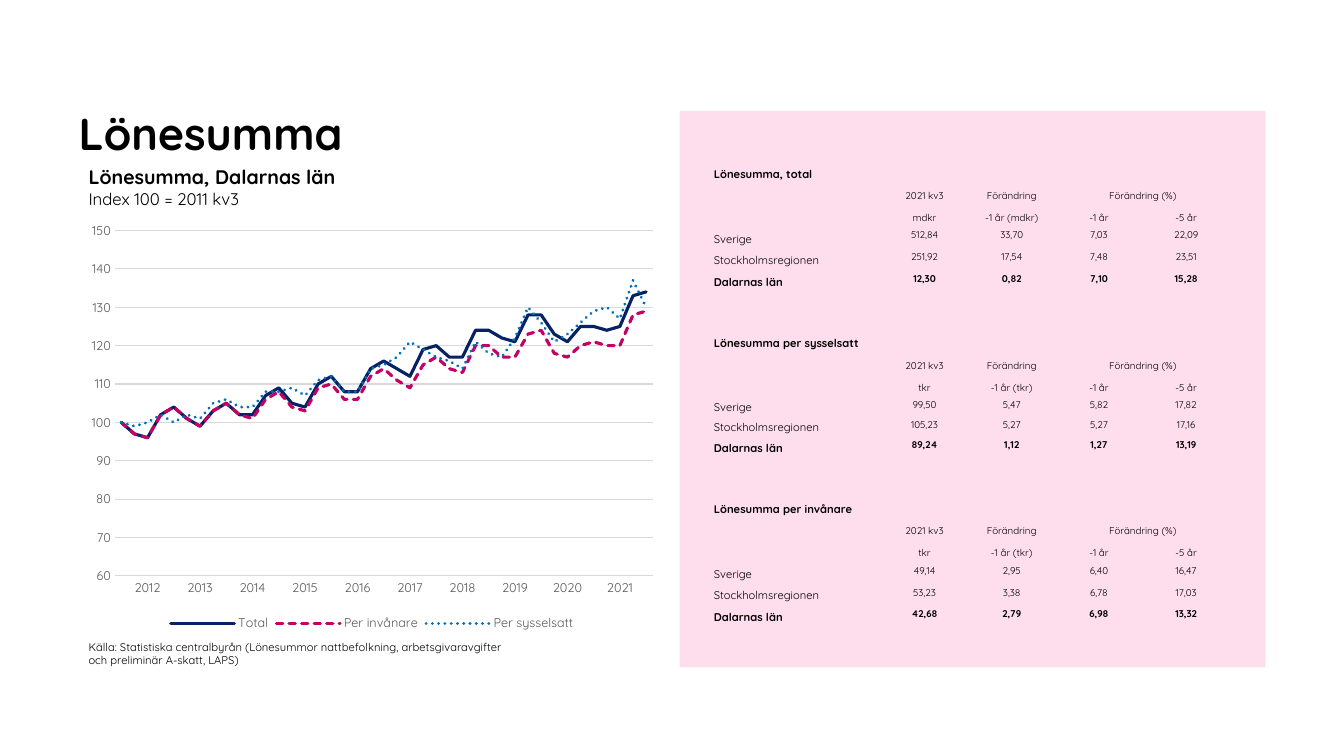
from lxml.etree import SubElement
from pptx import Presentation
from pptx.chart.data import CategoryChartData
from pptx.dml.color import RGBColor
from pptx.enum.chart import XL_CHART_TYPE, XL_LEGEND_POSITION, XL_TICK_MARK
from pptx.enum.dml import MSO_LINE
from pptx.enum.shapes import MSO_SHAPE
from pptx.enum.text import MSO_ANCHOR, MSO_AUTO_SIZE, PP_ALIGN
from pptx.oxml import parse_xml
from pptx.oxml.ns import nsdecls, qn
from pptx.util import Inches, Pt

FONT = "Quicksand"
BLACK = RGBColor(0, 0, 0)
PINK = RGBColor(0xFE, 0xDE, 0xED)
GREY = RGBColor(0x59, 0x59, 0x59)
PALE = RGBColor(0xD9, 0xD9, 0xD9)
NAVY = RGBColor(0x05, 0x23, 0x64)
MAGENTA = RGBColor(0xC4, 0x00, 0x64)
BLUE = RGBColor(0x00, 0x6E, 0xBF)
NO_GRID = "{2D5ABB26-0587-4C30-8999-92F81FD0307C}"

# Quarterly index: name, colour, dash, values
SERIES = [
    ("Total", NAVY, MSO_LINE.SOLID, [
        100, 97, 96, 102, 104, 101, 99, 103, 105, 102, 102, 107, 109, 105,
        104, 110, 112, 108, 108, 114, 116, 114, 112, 119, 120, 117, 117, 124,
        124, 122, 121, 128, 128, 123, 121, 125, 125, 124, 125, 133, 134]),
    ("Per invånare", MAGENTA, MSO_LINE.SQUARE_DOT, [
        100, 97, 96, 102, 104, 101, 99, 103, 105, 102, 101, 106, 108, 104,
        103, 109, 110, 106, 106, 112, 114, 111, 109, 115, 117, 114, 113, 120,
        120, 117, 117, 123, 124, 118, 117, 120, 121, 120, 120, 128, 129]),
    ("Per sysselsatt", BLUE, MSO_LINE.ROUND_DOT, [
        100, 99, 100, 102, 100, 102, 101, 105, 106, 104, 104, 108, 108, 109,
        107, 111, 112, 108, 108, 114, 115, 117, 121, 119, 117, 116, 114, 121,
        118, 117, 122, 130, 126, 121, 123, 126, 129, 130, 127, 137, 130]),
]

# Table blocks: heading, unit, figures per region
REGIONS = ["Sverige", "Stockholmsregionen", "Dalarnas län"]
BLOCKS = [
    ("Lönesumma, total", "mdkr", [
        ["512,84", "33,70", "7,03", "22,09"],
        ["251,92", "17,54", "7,48", "23,51"],
        ["12,30", "0,82", "7,10", "15,28"]]),
    ("Lönesumma per sysselsatt", "tkr", [
        ["99,50", "5,47", "5,82", "17,82"],
        ["105,23", "5,27", "5,27", "17,16"],
        ["89,24", "1,12", "1,27", "13,19"]]),
    ("Lönesumma per invånare", "tkr", [
        ["49,14", "2,95", "6,40", "16,47"],
        ["53,23", "3,38", "6,78", "17,03"],
        ["42,68", "2,79", "6,98", "13,32"]]),
]
WIDTHS = [1.67, 0.86, 0.87, 0.86, 0.87]
HEIGHTS = [0.21, 0.2, 0.22, 0.22, 0.21, 0.22, 0.21,
           0.4, 0.21, 0.22, 0.2, 0.2, 0.21, 0.2,
           0.4, 0.21, 0.22, 0.22, 0.21, 0.22]


def style(font, size, color=BLACK, bold=False):
    font.name, font.size, font.bold = FONT, Pt(size), bold
    font.color.rgb = color


def add_run(para, text, size, bold=False):
    run = para.add_run()
    run.text = text
    style(run.font, size, bold=bold)


def add_title(slide, text):
    title = slide.shapes.title
    title.left, title.top = Inches(0.78), Inches(0.37)
    title.width, title.height = Inches(9.22), Inches(1.22)
    frame = title.text_frame
    frame.auto_size = MSO_AUTO_SIZE.NONE
    frame.vertical_anchor = MSO_ANCHOR.BOTTOM
    frame.margin_left = frame.margin_right = 0
    frame.margin_top = frame.margin_bottom = 0
    para = frame.paragraphs[0]
    para.alignment = PP_ALIGN.LEFT
    para.line_spacing = 0.9
    add_run(para, text, 32, True)


def add_text(slide, box, lines):
    frame = slide.shapes.add_textbox(*map(Inches, box)).text_frame
    frame.word_wrap = True
    para = frame.paragraphs[0]
    for i, line in enumerate(lines):
        if i:
            para.add_line_break()
        add_run(para, *line)


def add_panel(slide):
    panel = slide.shapes.add_shape(
        MSO_SHAPE.RECTANGLE, *map(Inches, (6.74, 1.1, 5.81, 5.52)))
    panel.shadow.inherit = False
    panel.fill.solid()
    panel.fill.fore_color.rgb = PINK
    panel.line.fill.background()


def fill_cell(cell, text, size, bold=False, align=PP_ALIGN.CENTER,
              anchor=MSO_ANCHOR.BOTTOM):
    cell.vertical_anchor = anchor
    para = cell.text_frame.paragraphs[0]
    para.alignment = align
    add_run(para, text, size, bold)


def add_table(slide):
    frame = slide.shapes.add_table(
        len(HEIGHTS), len(WIDTHS), *map(Inches, (7.07, 1.59, 5.14, 4.61)))
    table = frame.table
    table.first_row = table.horz_banding = False
    table._tbl.tblPr.find(qn("a:tableStyleId")).text = NO_GRID
    for col, width in zip(table.columns, WIDTHS):
        col.width = Inches(width)
    for row, height in zip(table.rows, HEIGHTS):
        row.height = Inches(height)
    for cell in table.iter_cells():
        cell.fill.background()
        cell.margin_left = cell.margin_right = cell.margin_top = Inches(0.01)
        cell.margin_bottom = 0

    for i, (head, unit, data) in enumerate(BLOCKS):
        top = 7 * i
        fill_cell(table.cell(top, 0), head, 8, True, PP_ALIGN.LEFT)
        table.cell(top + 1, 3).merge(table.cell(top + 1, 4))
        for c, text in enumerate(["2021 kv3", "Förändring", "Förändring (%)"], 1):
            fill_cell(table.cell(top + 1, c), text, 7)
        for c, text in enumerate([unit, f"-1 år ({unit})", "-1 år", "-5 år"], 1):
            fill_cell(table.cell(top + 2, c), text, 7)
        for r, (region, nums) in enumerate(zip(REGIONS, data), top + 3):
            bold = region == REGIONS[-1]
            fill_cell(table.cell(r, 0), region, 8, bold, PP_ALIGN.LEFT)
            for c, num in enumerate(nums, 1):
                fill_cell(table.cell(r, c), num, 7, bold, anchor=MSO_ANCHOR.MIDDLE)

    # Small type in empty cells keeps the rows low
    for cell in table.iter_cells():
        if not cell.text_frame.text:
            para = cell.text_frame.paragraphs[0]._p
            SubElement(para, qn("a:endParaRPr")).set("sz", "700")


def set_plot(chart):
    edges = {"x": 0.06, "y": 0.04, "w": 0.92, "h": 0.82}
    parts = "".join(f'<c:{k} val="{v}"/>' for k, v in edges.items())
    layout = parse_xml(
        f'<c:layout {nsdecls("c")}><c:manualLayout>'
        '<c:layoutTarget val="inner"/><c:xMode val="edge"/>'
        f'<c:yMode val="edge"/>{parts}</c:manualLayout></c:layout>')
    area = chart._chartSpace.chart.plotArea
    old = area.find(qn("c:layout"))
    if old is not None:
        area.remove(old)
    area.insert(0, layout)


def add_chart(slide):
    data = CategoryChartData(number_format="0")
    data.categories = [str(2012 + i // 4) if i % 4 == 2 else ""
                       for i in range(len(SERIES[0][3]))]
    for name, _, _, vals in SERIES:
        data.add_series(name, vals)
    chart = slide.shapes.add_chart(
        XL_CHART_TYPE.LINE, *map(Inches, (0.79, 2.12, 5.8, 4.18)), data).chart
    style(chart.font, 10)
    chart.has_title = False
    chart.has_legend = True
    chart.legend.position = XL_LEGEND_POSITION.BOTTOM
    chart.legend.include_in_layout = False
    style(chart.legend.font, 9, GREY)
    set_plot(chart)

    # Axes
    years, index = chart.category_axis, chart.value_axis
    for axis in (years, index):
        axis.major_tick_mark = axis.minor_tick_mark = XL_TICK_MARK.NONE
        style(axis.tick_labels.font, 9, GREY)
    index.minimum_scale, index.maximum_scale, index.major_unit = 60, 150, 10
    index.format.line.fill.background()
    for line in (years.format.line, index.major_gridlines.format.line):
        line.color.rgb, line.width = PALE, Pt(0.75)
    # Automatic rotation keeps each year on one line
    years._element.txPr.find(qn("a:bodyPr")).set("rot", "-60000000")
    skip = parse_xml(f'<c:tickLblSkip {nsdecls("c")} val="1"/>')
    years._element.find(qn("c:noMultiLvlLbl")).addprevious(skip)

    # Lines with round caps
    for series, (_, color, dash, _) in zip(chart.plots[0].series, SERIES):
        series.smooth = False
        line = series.format.line
        line.color.rgb, line.width, line.dash_style = color, Pt(2.25), dash
        series._element.spPr.find(qn("a:ln")).set("cap", "rnd")


def main():
    deck = Presentation()
    deck.slide_width, deck.slide_height = Inches(13.33), Inches(7.5)
    slide = deck.slides.add_slide(deck.slide_layouts[5])
    add_panel(slide)
    add_title(slide, "Lönesumma")
    add_text(slide, (0.78, 6.3, 4.41, 0.37), [
        ("Källa: Statistiska centralbyrån (Lönesummor nattbefolkning, "
         "arbetsgivaravgifter och preliminär A-skatt, LAPS)", 8)])
    add_text(slide, (0.78, 1.59, 5.8, 0.54), [
        ("Lönesumma, Dalarnas län", 14, True), ("Index 100 = 2011 kv3", 12)])
    add_table(slide)
    add_chart(slide)
    deck.save("out.pptx")


if __name__ == "__main__":
    main()
